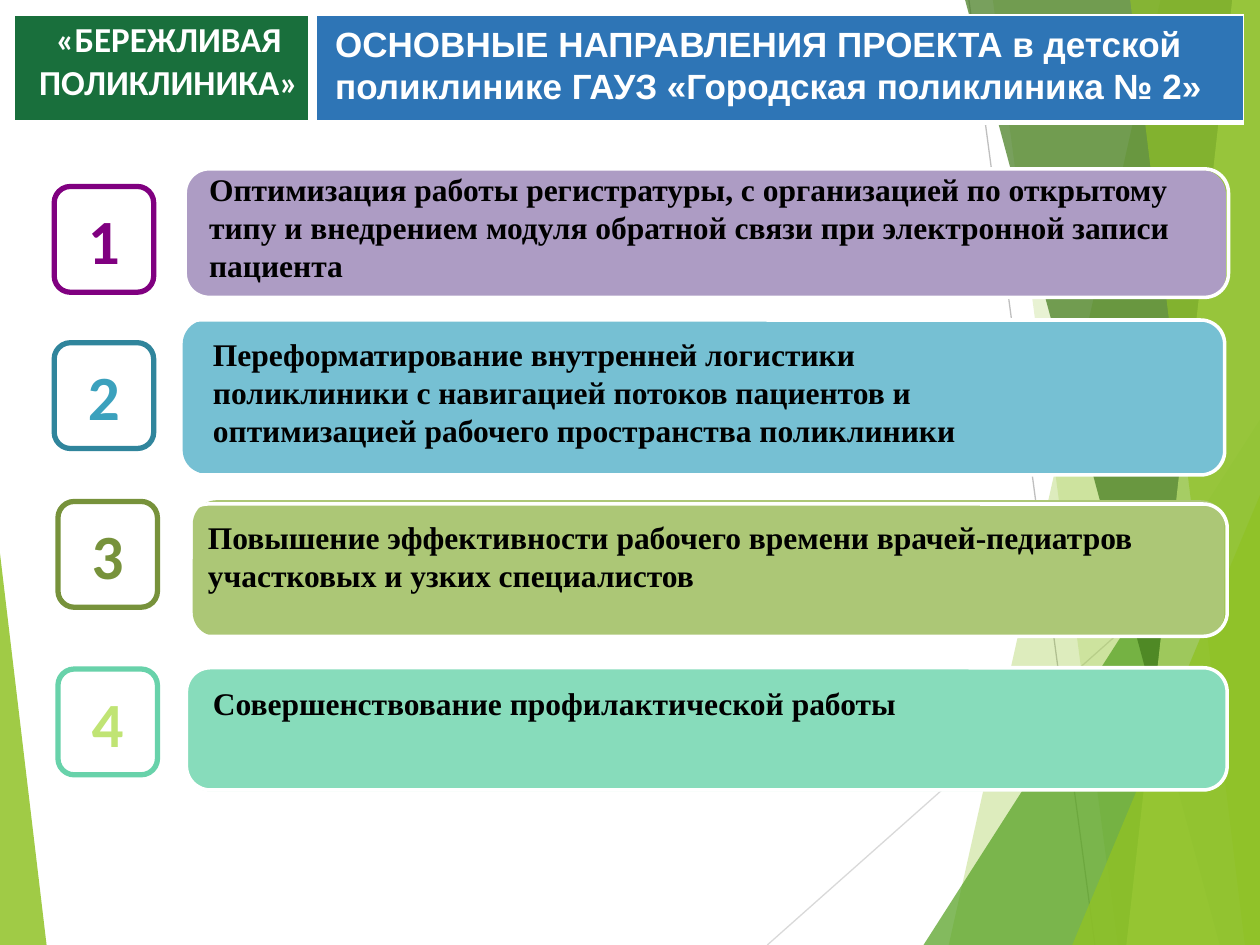
"""Builds the slide with the four main directions of the clinic project."""
from dataclasses import dataclass

from lxml.etree import SubElement
from pptx import Presentation
from pptx.dml.color import RGBColor
from pptx.enum.shapes import MSO_CONNECTOR as Connector, MSO_SHAPE as Shape
from pptx.enum.text import MSO_ANCHOR as Anchor, MSO_AUTO_SIZE as AutoSize, PP_ALIGN as Align
from pptx.oxml.ns import qn
from pptx.util import Inches, Pt


@dataclass(frozen=True)
class Theme:
    white: str = "FFFFFF"
    black: str = "000000"
    badge_green: str = "196F3C"
    header_blue: str = "2E75B6"
    lime: str = "90C226"
    leaf: str = "54A021"
    forest: str = "3F7819"
    pale: str = "C0E474"
    ray: str = "BFBFBF"
    light_ray: str = "D9D9D9"
    header_size: int = 20
    body_size: int = 18
    number_size: int = 36


THEME = Theme()
RAYS = [
    ((7.69, 0), (8.69, 7.5), THEME.ray),
    ((10, 4.03), (6.09, 7.5), THEME.light_ray),
]
FACETS_BACK = [(9.21, 7.53, THEME.lime, 30), (7.88, 8.87, THEME.lime, 20)]
FACETS_FRONT = [
    (7.66, 9.68, THEME.forest, 70),
    (9.78, 8.94, THEME.pale, 70),
    (8.97, 9.88, THEME.lime, 65),
]
DIRECTIONS = [
    {
        "text": "Оптимизация работы регистратуры, с организацией по открытому типу "
                "и внедрением модуля обратной связи при электронной записи пациента",
        "bar": (1.47, 1.35, 8.26, 1.02), "frame": (1.47, 1.34, 8.28, 1.02),
        "label": (1.66, 1.35, 7.9, 0.91), "fill": "AD9CC4",
        "badge": (0.43, 1.48), "line": "800080", "digit": "800080",
    },
    {
        "text": "Переформатирование внутренней логистики поликлиники с навигацией "
                "потоков пациентов и оптимизацией рабочего пространства поликлиники",
        "bar": (1.45, 2.54, 8.28, 1.22), "frame": (1.39, 2.54, 8.33, 1.23),
        "label": (1.69, 2.66, 6.1, 0.91), "fill": "76C0D3",
        "badge": (0.43, 2.72), "line": "30859C", "digit": "3BA1BD",
    },
    {
        "text": "Повышение эффективности рабочего времени врачей-педиатров "
                "участковых и узких специалистов",
        "bar": (1.53, 3.97, 8.19, 1.08), "frame": (1.46, 4, 8.28, 1.05),
        "label": (1.65, 4.11, 7.9, 0.6), "fill": "ACC776",
        "badge": (0.46, 3.98), "line": "77923B", "digit": "77923B",
    },
    {
        "text": "Совершенствование профилактической работы",
        "bar": (1.48, 5.31, 8.26, 0.97), "frame": (1.48, 5.3, 8.26, 0.97),
        "label": (1.69, 5.43, 7.8, 0.3), "fill": "87DCBB",
        "badge": (0.46, 5.31), "line": "68D2AA", "digit": THEME.pale,
    },
]


def apply(target, values):
    """Set each named attribute of the target."""
    for name, value in values.items():
        setattr(target, name, value)


def box(values):
    """Turn a tuple of inches into lengths."""
    return [Inches(value) for value in values]


def paint(shape, fill=None, opacity=100, line=None, width=0):
    """Give a shape its fill and line, without a shadow."""
    shape.shadow.inherit = False
    if fill:
        shape.fill.solid()
        shape.fill.fore_color.rgb = RGBColor.from_string(fill)
        if opacity < 100:
            color = shape.fill._xPr.find(qn("a:solidFill"))[0]
            SubElement(color, qn("a:alpha"), val=str(opacity * 1000))
    else:
        shape.fill.background()
    if line:
        shape.line.color.rgb = RGBColor.from_string(line)
        shape.line.width = Pt(width)
    else:
        shape.line.fill.background()


def write(frame, text, font, size, color, align=Align.LEFT, anchor=Anchor.TOP, inset=0):
    """Fill a text frame with one bold paragraph."""
    margins = ("margin_left", "margin_top", "margin_right", "margin_bottom")
    apply(frame, dict.fromkeys(margins, Inches(inset)))
    apply(frame, {"word_wrap": True, "auto_size": AutoSize.NONE, "vertical_anchor": anchor})
    style_paragraph(frame.paragraphs[0], text, font, size, color, align)


def style_paragraph(paragraph, text, font, size, color, align):
    """Write bold text into a paragraph."""
    paragraph.text = text
    paragraph.alignment = align
    apply(paragraph.runs[0].font, {"name": font, "size": Pt(size), "bold": True})
    paragraph.runs[0].font.color.rgb = RGBColor.from_string(color)


def add_ray(slide, start, end, color):
    """Draw a thin background line."""
    ray = slide.shapes.add_connector(Connector.STRAIGHT, *box(start + end))
    ray.line.color.rgb = RGBColor.from_string(color)
    ray.line.width = Pt(0.75)
    SubElement(ray.element.spPr, qn("a:effectLst"))


def add_facet(slide, top_x, bottom_x, color, opacity):
    """Draw a translucent facet that reaches the right edge."""
    builder = slide.shapes.build_freeform(Inches(top_x), 0)
    corners = [(10, 0), (10, 7.5), (bottom_x, 7.5)]
    builder.add_line_segments([box(corner) for corner in corners], close=True)
    paint(builder.convert_to_shape(), color, opacity)


def add_corner(slide, place, apex, color, opacity):
    """Draw a translucent triangle with its apex on one side."""
    corner = slide.shapes.add_shape(Shape.ISOSCELES_TRIANGLE, *box(place))
    corner.adjustments[0] = apex
    paint(corner, color, opacity)


def add_backdrop(slide):
    """Draw the rays and green facets."""
    for ray in RAYS:
        add_ray(slide, *ray)
    for facet in FACETS_BACK:
        add_facet(slide, *facet)
    add_corner(slide, (7.33, 3.33, 2.67, 4.17), 1, THEME.leaf, 72)
    for facet in FACETS_FRONT:
        add_facet(slide, *facet)
    add_corner(slide, (8.51, 3.93, 1.49, 3.57), 1, THEME.lime, 80)
    add_corner(slide, (0, 4.39, 0.37, 3.11), 0, THEME.lime, 85)


def add_rounded(slide, place, radius, **style):
    """Draw a rounded rectangle with a corner radius in inches."""
    rounded = slide.shapes.add_shape(Shape.ROUNDED_RECTANGLE, *box(place))
    rounded.adjustments[0] = radius / min(place[2:])
    paint(rounded, **style)
    return rounded


def add_direction(slide, number, direction):
    """Draw a numbered badge and its bar with text."""
    add_rounded(slide, direction["bar"], 0.19, fill=direction["fill"])
    add_rounded(slide, direction["frame"], 0.19, line=THEME.white, width=2)
    label = slide.shapes.add_textbox(*box(direction["label"]))
    write(label.text_frame, direction["text"], "Times New Roman", THEME.body_size, THEME.black)
    badge = add_rounded(slide, direction["badge"] + (0.79, 0.84), 0.13,
                        fill=THEME.white, line=direction["line"], width=3)
    write(badge.text_frame, str(number), "Calibri", THEME.number_size,
          direction["digit"], Align.CENTER, Anchor.MIDDLE)


def style_cell(cell, fill, borders):
    """Give a cell white borders and a solid fill."""
    properties = cell._tc.get_or_add_tcPr()
    for side, width in borders.items():
        border = SubElement(properties, qn(f"a:ln{side}"), w=str(Pt(width)))
        SubElement(SubElement(border, qn("a:solidFill")), qn("a:srgbClr"), val=THEME.white)
    cell.fill.solid()
    cell.fill.fore_color.rgb = RGBColor.from_string(fill)


def add_header(slide):
    """Draw the header table and put the title over it."""
    header = slide.shapes.add_table(1, 2, *box((0.11, 0.12, 9.76, 0.85))).table
    for column, width in zip(header.columns, (2.37, 7.39)):
        column.width = Inches(width)
    program, band = header.cell(0, 0), header.cell(0, 1)
    style_cell(program, THEME.badge_green, {"L": 1, "R": 6, "T": 1, "B": 3})
    style_cell(band, THEME.header_blue, {"L": 6, "R": 1, "T": 1, "B": 3})
    apply(program, {"margin_left": Inches(0.09), "margin_right": 0,
                    "margin_top": Inches(0.03), "margin_bottom": 0})
    style_paragraph(program.text_frame.paragraphs[0], "«БЕРЕЖЛИВАЯ ПОЛИКЛИНИКА»",
                    "Calibri", THEME.header_size, THEME.white, Align.CENTER)
    title = slide.shapes.title
    apply(title, dict(zip(("left", "top", "width", "height"), box((2.56, 0.12, 7.44, 0.77)))))
    write(title.text_frame, "ОСНОВНЫЕ НАПРАВЛЕНИЯ ПРОЕКТА в детской поликлинике "
          "ГАУЗ «Городская поликлиника № 2»", "Arial", THEME.header_size, THEME.white, inset=0.06)
    title.text_frame.margin_left = Inches(0.1)
    title.element.getparent().append(title.element)


def main():
    """Build and save the slide."""
    deck = Presentation()
    apply(deck, {"slide_width": Inches(10), "slide_height": Inches(7.5)})
    slide = deck.slides.add_slide(deck.slide_layouts[5])
    add_backdrop(slide)
    for number, direction in enumerate(DIRECTIONS, 1):
        add_direction(slide, number, direction)
    add_header(slide)
    deck.save("out.pptx")


if __name__ == "__main__":
    main()
